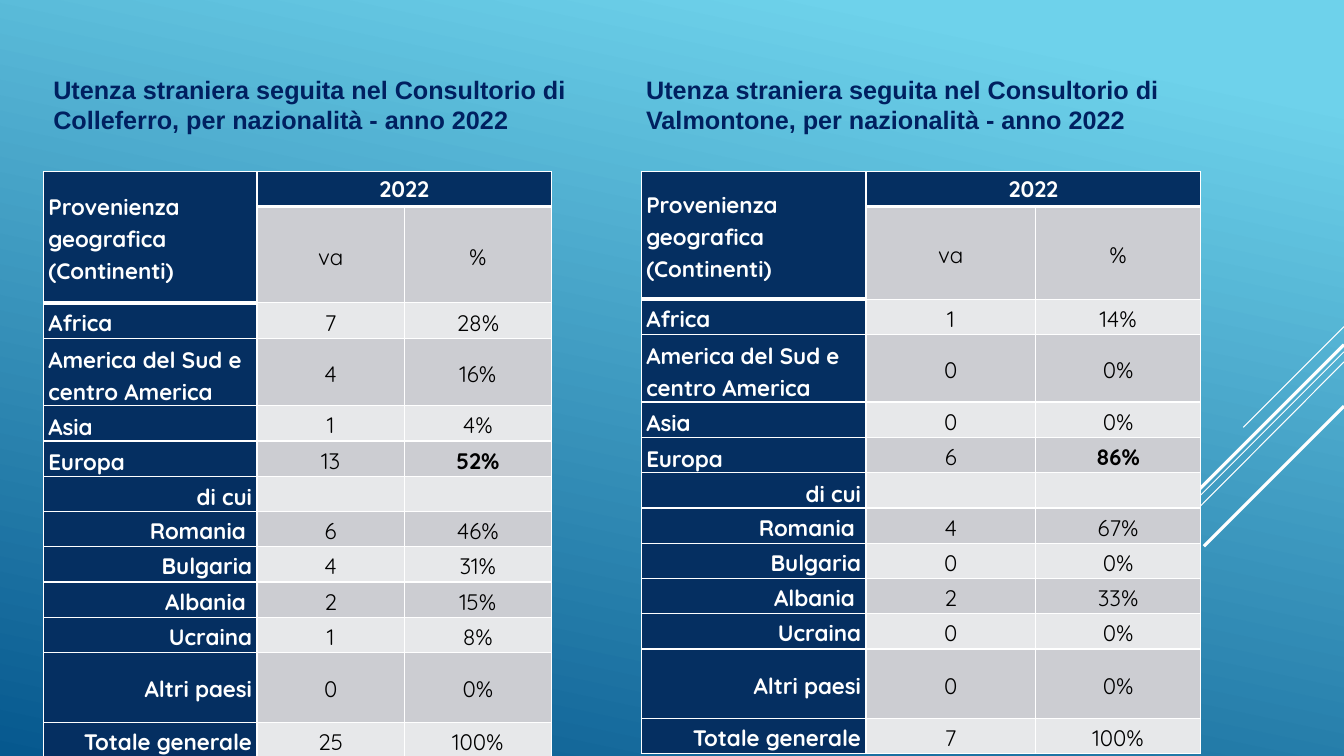
from dataclasses import dataclass
from typing import Any

from lxml import etree
from pptx import Presentation
from pptx import util as u
from pptx.dml.color import RGBColor
from pptx.enum import shapes, text
from pptx.oxml import ns

WHITE = RGBColor(0xFF, 0xFF, 0xFF)
BLACK = RGBColor(0x00, 0x00, 0x00)
NAVY = RGBColor(0x05, 0x2F, 0x61)
TITLE_BLUE = RGBColor(0x00, 0x20, 0x60)
DARK_BAND = RGBColor(0xCC, 0xCD, 0xD2)
LIGHT_BAND = RGBColor(0xE7, 0xE8, 0xEA)
SKY = RGBColor(0x6E, 0xD2, 0xEB)
DEEP_BLUE = RGBColor(0x06, 0x58, 0x8E)

LEFT, CENTER, RIGHT = text.PP_ALIGN.LEFT, text.PP_ALIGN.CENTER, text.PP_ALIGN.RIGHT
TOP, MIDDLE, BOTTOM = (text.MSO_ANCHOR.TOP, text.MSO_ANCHOR.MIDDLE,
                       text.MSO_ANCHOR.BOTTOM)

TABLE_TOP = 1.7
TITLE_TOP, TITLE_HEIGHT = 0.69, 1.01
ROW_HEIGHT = 0.35
TALL_ROWS = {3: 0.67, 11: 0.69}
EUROPE_ROW = 5


@dataclass(frozen=True)
class Origin:
    name: str
    align: Any = RIGHT
    anchor: Any = MIDDLE


@dataclass(frozen=True)
class Clinic:
    title: str
    title_left: float
    title_width: float
    table_left: float
    columns: tuple[float, float, float]
    subheader_height: float
    counts: tuple[str, ...]
    shares: tuple[str, ...]


@dataclass(frozen=True)
class Ray:
    start: tuple[float, float]
    end: tuple[float, float]
    weight: float = 0.75


ORIGINS = (
    Origin("Africa", LEFT),
    Origin("America del Sud e centro America", LEFT, BOTTOM),
    Origin("Asia", LEFT, BOTTOM),
    Origin("Europa", LEFT, BOTTOM),
    Origin("di cui", anchor=BOTTOM),
    Origin("Romania "),
    Origin("Bulgaria"),
    Origin("Albania "),
    Origin("Ucraina"),
    Origin("Altri paesi"),
    Origin("Totale generale"),
)

CLINICS = (
    Clinic("Utenza straniera seguita nel Consultorio di Colleferro, "
           "per nazionalità - anno 2022",
           0.43, 6.02, 0.43, (2.12, 1.46, 1.46), 0.95,
           ("7", "4", "1", "13", "", "6", "4", "2", "1", "0", "25"),
           ("28%", "16%", "4%", "52%", "", "46%", "31%", "15%", "8%", "0%", "100%")),
    Clinic("Utenza straniera seguita nel Consultorio di Valmontone, "
           "per nazionalità - anno 2022",
           6.31, 6.13, 6.36, (2.23, 1.68, 1.64), 0.91,
           ("1", "0", "0", "6", "", "4", "0", "2", "0", "0", "7"),
           ("14%", "0%", "0%", "86%", "", "67%", "0%", "33%", "0%", "0%", "100%")),
)

RAYS = (
    Ray((13.33, 3.24), (12.33, 4.24)),
    Ray((13.33, 3.49), (10.07, 6.75)),
    Ray((13.33, 3.59), (11.26, 5.67)),
    Ray((13.33, 3.42), (11.42, 5.33), 2.25),
    Ray((13.33, 4.03), (11.94, 5.42), 2.25),
)


def apply_format(target: Any, values: dict[str, Any]) -> None:
    for name, value in values.items():
        setattr(target, name, value)


def paint_background(slide: Any) -> None:
    fill = slide.background.fill
    fill.gradient()
    fill.gradient_angle = 258
    for stop, color, position in zip(fill.gradient_stops, (SKY, DEEP_BLUE), (0.1, 1)):
        stop.color.rgb = color
        stop.position = position


def draw_ray(slide: Any, ray: Ray) -> None:
    points = (u.Inches(value) for value in (*ray.start, *ray.end))
    line = slide.shapes.add_connector(shapes.MSO_CONNECTOR.STRAIGHT, *points)
    line.line.color.rgb = WHITE
    line.line.width = u.Pt(ray.weight)
    etree.SubElement(line._element.spPr, ns.qn("a:effectLst"))


def draw_title(slide: Any, clinic: Clinic) -> None:
    title = slide.shapes.add_textbox(
        u.Inches(clinic.title_left), u.Inches(TITLE_TOP),
        u.Inches(clinic.title_width), u.Inches(TITLE_HEIGHT))
    apply_format(title.text_frame, {"word_wrap": True, "vertical_anchor": TOP})
    run = title.text_frame.paragraphs[0].add_run()
    run.text = clinic.title
    apply_format(run.font, {"name": "Arial", "size": u.Pt(18), "bold": True})
    run.font.color.rgb = TITLE_BLUE


def set_borders(cell: Any, top: float, bottom: float) -> None:
    """Draw white borders, one point wide at the sides."""
    properties = cell._tc.get_or_add_tcPr()
    weights = {"lnL": 1, "lnR": 1, "lnT": top, "lnB": bottom}
    for position, (side, weight) in enumerate(weights.items()):
        border = etree.Element(ns.qn(f"a:{side}"), w=str(u.Pt(weight)))
        fill = etree.SubElement(border, ns.qn("a:solidFill"))
        etree.SubElement(fill, ns.qn("a:srgbClr"), val=str(WHITE))
        properties.insert(position, border)


def write_cell(cell: Any, words: str, align: Any, anchor: Any,
               color: RGBColor, bold: bool) -> None:
    apply_format(cell, {
        "margin_left": u.Inches(0.05), "margin_right": u.Inches(0.05),
        "margin_top": 0, "margin_bottom": 0, "vertical_anchor": anchor})
    if not words:
        return
    paragraph = cell.text_frame.paragraphs[0]
    apply_format(paragraph, {
        "alignment": align, "line_spacing": 1.15, "space_after": u.Pt(10)})
    run = paragraph.add_run()
    run.text = words
    apply_format(run.font, {"name": "Quicksand", "size": u.Pt(16), "bold": bold})
    run.font.color.rgb = color


def draw_table(slide: Any, clinic: Clinic) -> None:
    heights = [TALL_ROWS.get(row, ROW_HEIGHT) for row in range(len(ORIGINS) + 2)]
    heights[1] = clinic.subheader_height
    table = slide.shapes.add_table(
        len(heights), len(clinic.columns),
        u.Inches(clinic.table_left), u.Inches(TABLE_TOP),
        u.Inches(sum(clinic.columns)), u.Inches(sum(heights))).table
    apply_format(table, {"first_row": False, "horz_banding": False})
    for column, width in zip(table.columns, clinic.columns):
        column.width = u.Inches(width)
    for row, height in zip(table.rows, heights):
        row.height = u.Inches(height)
    table.cell(0, 0).merge(table.cell(1, 0))
    table.cell(0, 1).merge(table.cell(0, 2))

    header = Origin("Provenienza geografica (Continenti)", LEFT)
    origins = (header, Origin(""), *ORIGINS)
    counts = ("2022", "va", *clinic.counts)
    shares = ("", "%", *clinic.shares)
    for row, (origin, *values) in enumerate(zip(origins, counts, shares)):
        band = DARK_BAND if row % 2 else LIGHT_BAND
        for column, words in enumerate((origin.name, *values)):
            cell = table.cell(row, column)
            is_header = row == 0 or column == 0
            cell.fill.solid()
            cell.fill.fore_color.rgb = NAVY if is_header else band
            last_header_row = 1 if column == 0 else 0
            set_borders(cell, top=3 if row == last_header_row + 1 else 1,
                        bottom=3 if row == last_header_row else 1)
            if column == 0:
                align, anchor = origin.align, origin.anchor
            else:
                align, anchor = CENTER, MIDDLE if row else TOP
            bold = is_header or (row == EUROPE_ROW and column == 2)
            write_cell(cell, words, align, anchor,
                       WHITE if is_header else BLACK, bold)


def main() -> None:
    deck = Presentation()
    apply_format(deck, {"slide_width": u.Inches(13.33), "slide_height": u.Inches(7.5)})
    slide = deck.slides.add_slide(deck.slide_layouts[6])
    paint_background(slide)
    for ray in RAYS:
        draw_ray(slide, ray)
    for clinic in CLINICS:
        draw_table(slide, clinic)
        draw_title(slide, clinic)
    deck.save("out.pptx")


if __name__ == "__main__":
    main()
